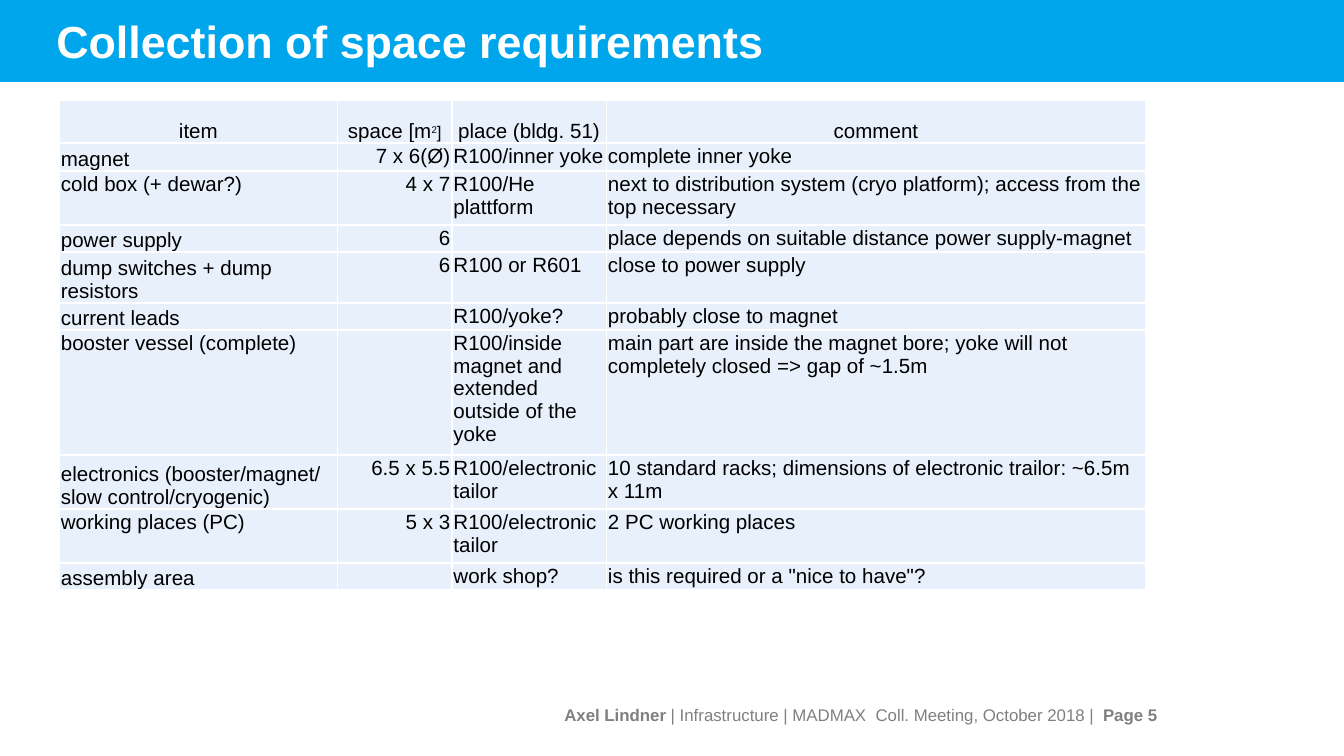
from lxml import etree
from pptx import Presentation
from pptx.dml.color import RGBColor
from pptx.enum.shapes import MSO_SHAPE
from pptx.enum.text import MSO_ANCHOR, PP_ALIGN
from pptx.oxml.ns import qn
from pptx.util import Cm, Pt

LEFT, CENTER, RIGHT = PP_ALIGN.LEFT, PP_ALIGN.CENTER, PP_ALIGN.RIGHT
TOP, MIDDLE, BOTTOM = MSO_ANCHOR.TOP, MSO_ANCHOR.MIDDLE, MSO_ANCHOR.BOTTOM
RECTANGLE = MSO_SHAPE.RECTANGLE


def color(value):
    return RGBColor.from_string(value)


def add_text(paragraph, text, size=11, fill="000000", bold=False, align=LEFT, baseline=0):
    paragraph.alignment = align
    run = paragraph.add_run()
    run.text = text
    run.font.name = "Arial"
    run.font.size = Pt(size)
    run.font.bold = bold
    run.font.color.rgb = color(fill)
    if baseline:
        run.font._element.set("baseline", str(baseline * 1000))


presentation = Presentation()
presentation.slide_width = Cm(25.4)
presentation.slide_height = Cm(14.28)
slide = presentation.slides.add_slide(presentation.slide_layouts[5])

band = slide.shapes.add_shape(RECTANGLE, 0, 0, presentation.slide_width, Cm(1.55))
band.shadow.inherit = False
band.fill.solid()
band.fill.fore_color.rgb = color("00A6EB")
band.line.fill.background()
slide.shapes._spTree.insert(2, band._element)

title = slide.shapes.title
title.left, title.top, title.width, title.height = Cm(0.81), Cm(0.2), Cm(23.67), Cm(1.14)
title.text_frame.vertical_anchor = MIDDLE
add_text(title.text_frame.paragraphs[0], "Collection of space requirements",
         size=24, fill="FFFFFF", bold=True)

footer = slide.shapes.add_textbox(Cm(0.79), Cm(13.08), Cm(21.08), Cm(0.84))
footer.text_frame.word_wrap = True
footer.text_frame.vertical_anchor = MIDDLE
footer.text_frame.margin_right = 0
for text, bold in [
    ("Axel Lindner ", True),
    ("| Infrastructure | MADMAX  Coll. Meeting, October 2018 |  ", False),
    ("Page 5", True),
]:
    add_text(footer.text_frame.paragraphs[0], text, size=9, fill="808080", bold=bold, align=RIGHT)

column_widths = [5.26, 2.16, 2.92, 10.19]
rows = [
    (0.8, BOTTOM, ["item", "space [m", "place (bldg. 51)", "comment"]),
    (0.53, BOTTOM, ["magnet", "7 x 6(Ø)", "R100/inner yoke", "complete inner yoke"]),
    (1.02, TOP, ["cold box (+ dewar?)", "4 x 7", "R100/He plattform",
                 "next to distribution system (cryo platform); access from the top necessary"]),
    (0.51, BOTTOM, ["power supply", "6", "",
                    "place depends on suitable distance power supply-magnet"]),
    (0.89, BOTTOM, ["dump switches + dump resistors", "6", "R100 or R601",
                    "close to power supply"]),
    (0.51, BOTTOM, ["current leads", "", "R100/yoke?", "probably close to magnet"]),
    (2.18, TOP, ["booster vessel (complete)", "",
                 "R100/inside magnet and extended outside of the yoke",
                 "main part are inside the magnet bore; yoke will not completely closed "
                 "=> gap of ~1.5m"]),
    (1.02, BOTTOM, ["electronics (booster/magnet/ slow control/cryogenic)", "6.5 x 5.5",
                    "R100/electronic tailor",
                    "10 standard racks; dimensions of electronic trailor: ~6.5m x 11m"]),
    (1.02, TOP, ["working places (PC)", "5 x 3", "R100/electronic tailor",
                 "2 PC working places"]),
    (0.51, BOTTOM, ["assembly area", "", "work shop?",
                    "is this required or a \"nice to have\"?"]),
]
table = slide.shapes.add_table(
    len(rows), len(column_widths), Cm(1.12), Cm(1.9),
    Cm(sum(column_widths)), Cm(sum(row[0] for row in rows))).table
table.first_row = False
table.horz_banding = False
for column, width in zip(table.columns, column_widths):
    column.width = Cm(width)

for row_index, (height, item_anchor, texts) in enumerate(rows):
    table.rows[row_index].height = Cm(height)
    for column_index, text in enumerate(texts):
        cell = table.cell(row_index, column_index)
        cell.margin_left = cell.margin_right = cell.margin_top = Cm(0.03)
        cell.margin_bottom = 0
        is_header = row_index == 0
        cell.vertical_anchor = item_anchor if is_header or column_index == 0 else TOP
        properties = cell._tc.get_or_add_tcPr()
        for side in ("a:lnL", "a:lnR", "a:lnT", "a:lnB"):
            border = etree.SubElement(properties, qn(side), w=str(Pt(1)))
            border_fill = etree.SubElement(border, qn("a:solidFill"))
            etree.SubElement(border_fill, qn("a:srgbClr"), val="FFFFFF")
        cell.fill.solid()
        cell.fill.fore_color.rgb = color("E7F0FB")
        paragraph = cell.text_frame.paragraphs[0]
        if text:
            align = CENTER if is_header else RIGHT if column_index == 1 else LEFT
            add_text(paragraph, text, align=align)
        else:
            etree.SubElement(paragraph._p, qn("a:endParaRPr"), sz="1100")

space_header = table.cell(0, 1).text_frame.paragraphs[0]
add_text(space_header, "2", size=9, align=CENTER, baseline=30)
add_text(space_header, "]", size=9, align=CENTER)

presentation.save("out.pptx")
